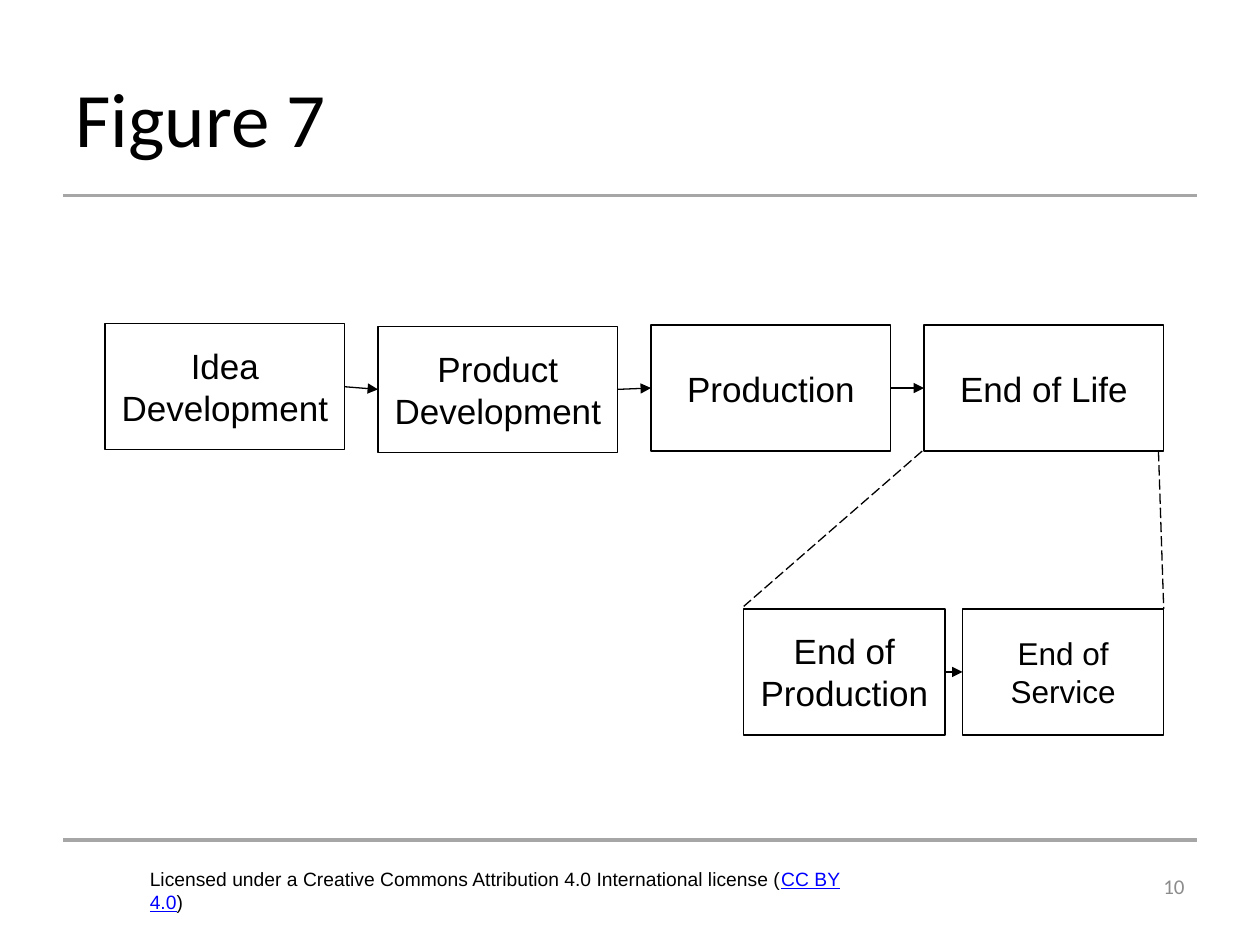
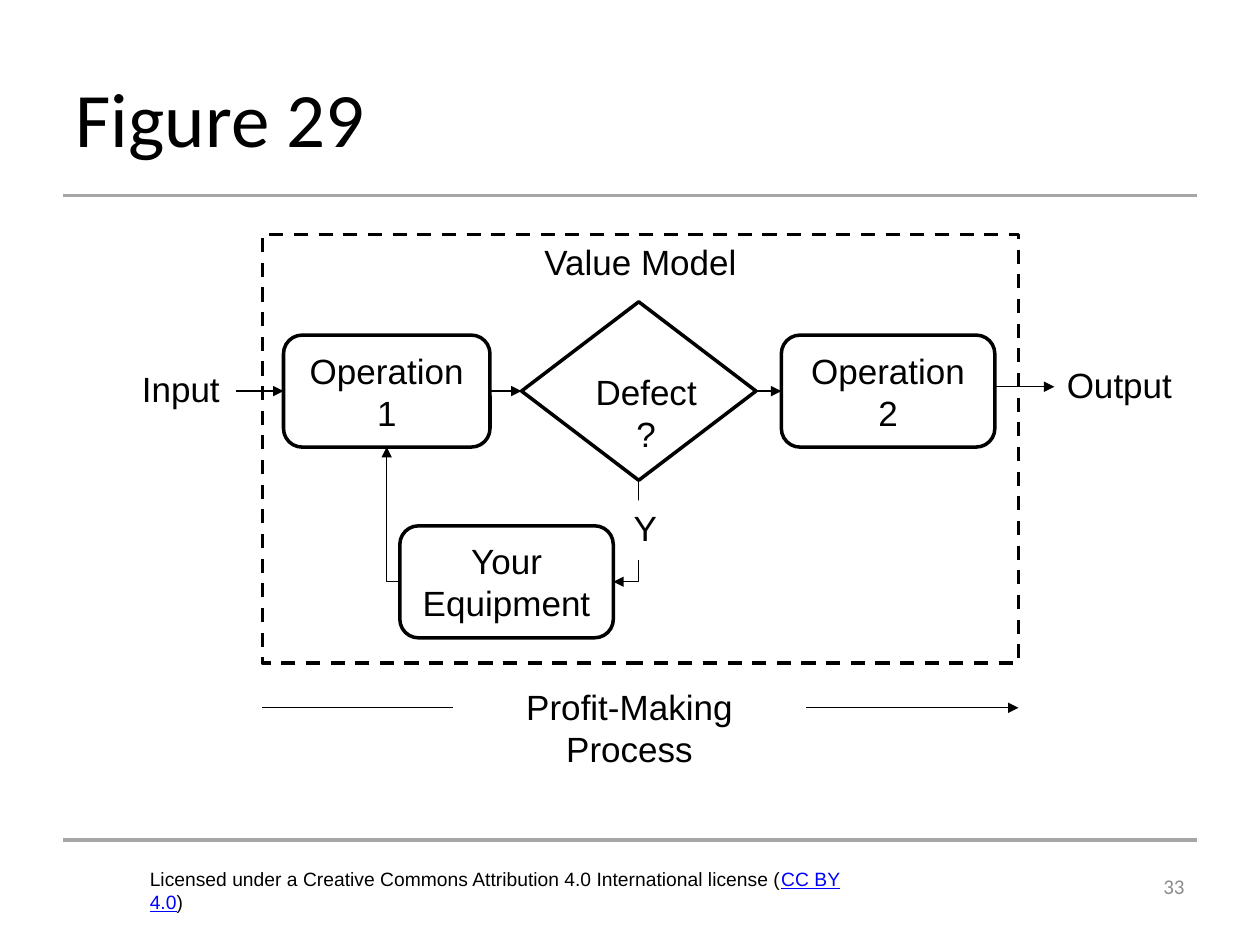
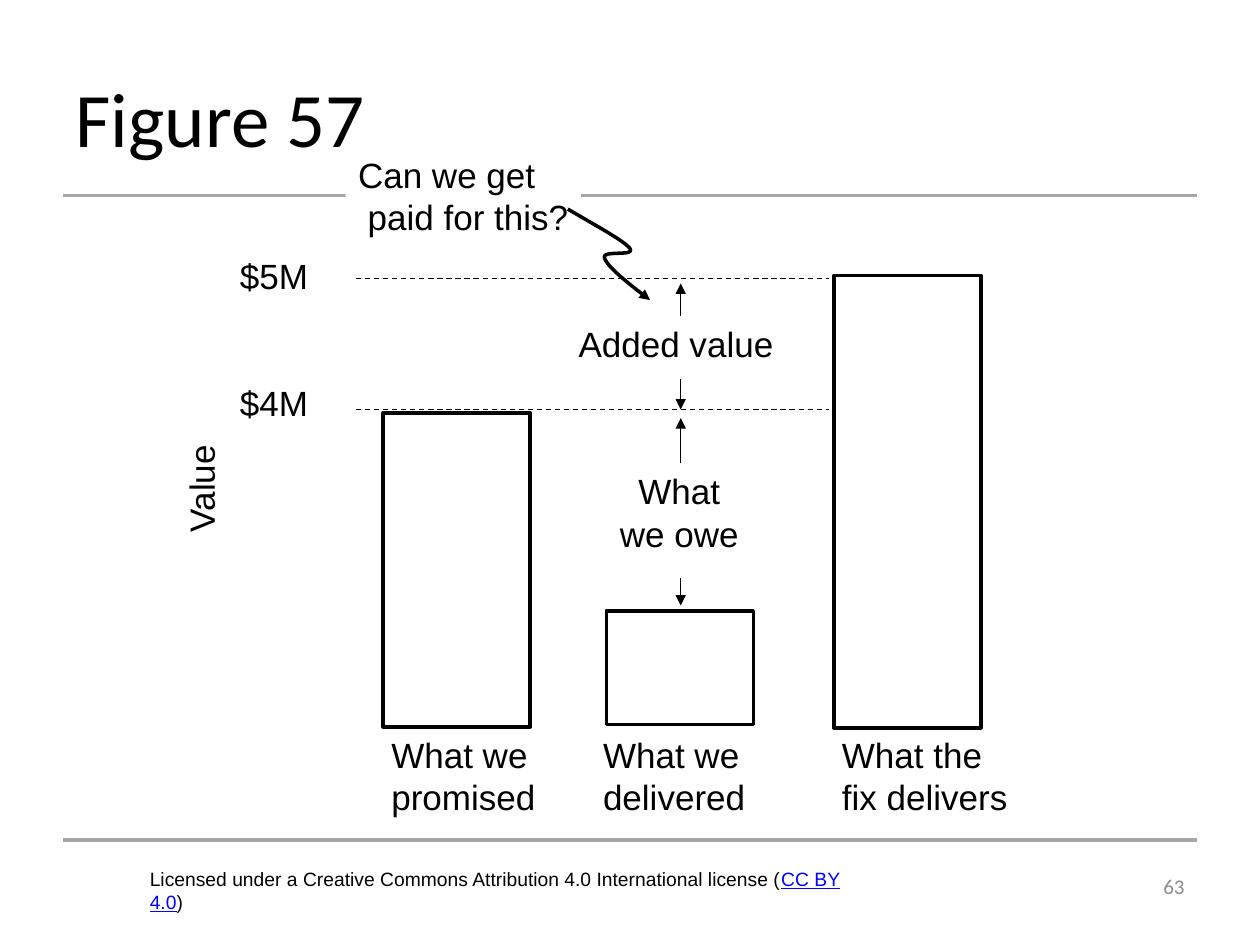
import lxml.etree
import pptx
import pptx.dml.color
import pptx.enum.dml
import pptx.enum.shapes
import pptx.enum.text
import pptx.oxml.ns
import pptx.util

Pt = pptx.util.Pt
SHAPE = pptx.enum.shapes.MSO_SHAPE
CONNECTOR = pptx.enum.shapes.MSO_CONNECTOR
DASH = pptx.enum.dml.MSO_LINE
ALIGN = pptx.enum.text.PP_ALIGN
ANCHOR = pptx.enum.text.MSO_ANCHOR

BLACK, WHITE, RULE_GRAY, NUMBER_GRAY, LINK_BLUE = "000000", "FFFFFF", "A6A6A6", "8C8C8C", "0000FF"
BODY_FONT, HEADING_FONT = "Arial", "Calibri"
THIN, THICK = 0.75, 2
TITLE_BOX = (36, 21.5, 648, 90)
FOOTER_BOX = (36, 480, 648, 41)


def color(value):
    """Turn a hex string into a colour."""
    return pptx.dml.color.RGBColor.from_string(value)


def write(shape, text, size=20, font=BODY_FONT, ink=BLACK, align=ALIGN.LEFT, anchor=ANCHOR.TOP):
    """Put text in a shape, one paragraph a line, and format it."""
    frame = shape.text_frame
    frame.text = text
    frame.word_wrap = True
    frame.vertical_anchor = anchor
    for para in frame.paragraphs:
        para.alignment = align
        para.font.size = Pt(size)
        para.font.name = font
        para.font.color.rgb = color(ink)


def style_line(line, ink, width, dash=None):
    """Set the colour, width and dash of a line."""
    line.color.rgb = color(ink)
    line.width = Pt(width)
    if dash:
        line.dash_style = dash


def add_arrowheads(shape, ends):
    """Add triangles at the named ends, headEnd before tailEnd."""
    outline = shape._element.spPr.find(pptx.oxml.ns.qn("a:ln"))
    for end in ends:
        lxml.etree.SubElement(outline, pptx.oxml.ns.qn(f"a:{end}"), type="triangle")


def add_label(page, left, top, width, height, text, **text_style):
    """Add a text box."""
    label = page.shapes.add_textbox(Pt(left), Pt(top), Pt(width), Pt(height))
    write(label, text, **text_style)
    return label


def add_patch(page, left, top, width, height, text, **text_style):
    """Add a text box on white that hides what lies behind it."""
    patch = add_label(page, left, top, width, height, text, **text_style)
    patch.fill.solid()
    patch.fill.fore_color.rgb = color(WHITE)
    return patch


def add_box(page, kind, left, top, width, height, text="", weight=THICK, fill=None, dash=None,
            anchor=ANCHOR.MIDDLE, size=20):
    """Add an outlined shape with centred text."""
    box = page.shapes.add_shape(kind, Pt(left), Pt(top), Pt(width), Pt(height))
    box.shadow.inherit = False
    if fill:
        box.fill.solid()
        box.fill.fore_color.rgb = color(fill)
    else:
        box.fill.background()
    style_line(box.line, BLACK, weight, dash)
    if text:
        write(box, text, size=size, align=ALIGN.CENTER, anchor=anchor)
    return box


def add_line(page, start, end, ink=BLACK, weight=THIN, dash=None, ends=(), kind=CONNECTOR.STRAIGHT):
    """Add a connector between two points."""
    line = page.shapes.add_connector(kind, *(Pt(value) for value in (*start, *end)))
    style_line(line.line, ink, weight, dash)
    add_arrowheads(line, ends)
    lxml.etree.SubElement(line._element.spPr, pptx.oxml.ns.qn("a:effectLst"))
    return line


def add_corner(page, start, end, ends):
    """Add a connector with one bend that leaves its start sideways."""
    corner = add_line(page, start, end, ends=ends, kind=CONNECTOR.ELBOW)
    corner._element.spPr.find(pptx.oxml.ns.qn("a:prstGeom")).set("prst", "bentConnector2")


def join(page, first, second):
    """Draw an arrow from the right side of one box to the left side of the next."""
    arrow = add_line(page, (0, 0), (1, 1), ends=["tailEnd"])
    arrow.begin_connect(first, 3)
    arrow.end_connect(second, 1)


def curve_points(start, segments, steps=12):
    """Return points along a chain of cubic curves."""
    points = [start]
    for first, second, end in segments:
        for step in range(1, steps + 1):
            t = step / steps
            weights = ((1 - t) ** 3, 3 * t * (1 - t) ** 2, 3 * t * t * (1 - t), t ** 3)
            corners = (start, first, second, end)
            points.append(tuple(sum(w * corner[axis] for w, corner in zip(weights, corners))
                                for axis in (0, 1)))
        start = end
    return points


def add_title(page, area, text):
    """Place the title with the rule under it."""
    left, top, width, height = area
    title = page.shapes.title
    title.left, title.top, title.width, title.height = (Pt(value) for value in area)
    write(title, text, size=44, font=HEADING_FONT, anchor=ANCHOR.MIDDLE)
    bottom = top + height
    add_line(page, (left, bottom), (left + width, bottom), RULE_GRAY, 1.75)


def add_footer(page, area, number):
    """Place the rule, licence and slide number at the foot."""
    left, top, width, height = area
    add_line(page, (left, top), (left + width, top), RULE_GRAY, 1.75)
    licence = add_label(page, left + 42.5, top + 12, 430.5, 21, "", size=11)
    para = licence.text_frame.paragraphs[0]
    for text in ("Licensed under a Creative Commons Attribution 4.0 International license (", "CC BY 4.0", ")"):
        para.add_run().text = text
    link = para.runs[1]
    link.font.color.rgb = color(LINK_BLUE)
    link.font.underline = True
    add_label(page, left + width - 132, top + 12, 132, 29, number, size=12, font=HEADING_FONT,
              ink=NUMBER_GRAY, align=ALIGN.RIGHT, anchor=ANCHOR.MIDDLE)


def draw_life_cycle(page, area):
    """Draw the life cycle stages and the two phases of the last one."""
    left, top, width, height = area
    right, stage_height, pitch = left + width, 72, 156
    stage_specs = (("Idea\nDevelopment", 0, WHITE), ("Product\nDevelopment", 1.5, WHITE),
                   ("Production", 0.75, None), ("End of Life", 0.75, None))
    stages = [add_box(page, SHAPE.RECTANGLE, left + pitch * index, top + drop, 137, stage_height,
                      text, THIN, fill)
              for index, (text, drop, fill) in enumerate(stage_specs)]
    phase_top = top + height - stage_height
    phases = [add_box(page, SHAPE.RECTANGLE, right - offset, phase_top, 115, stage_height,
                      text, THIN, WHITE, size=size)
              for text, offset, size in (("End of Production", 240, 20), ("End of Service", 115, 18))]
    for row in (stages, phases):
        for first, second in zip(row, row[1:]):
            join(page, first, second)
    stage_bottom = top + stage_height + 0.75
    add_line(page, (left + 3 * pitch - 1, stage_bottom), (right - 240, phase_top - 1.5), dash=DASH.LONG_DASH)
    add_line(page, (right - 3, stage_bottom), (right, phase_top), dash=DASH.LONG_DASH)


def draw_value_model(page, area):
    """Draw the value model frame, the flow in it and the process under it."""
    left, top, width, height = area
    add_box(page, SHAPE.RECTANGLE, *area, "Value Model", dash=DASH.DASH, anchor=ANCHOR.TOP)
    source = add_label(page, left - 76, top + 72.5, 61, 34, "Input")
    result = add_label(page, left + 452.5, top + 70, 78.5, 34, "Output")
    first, second, equipment = (
        add_box(page, SHAPE.ROUNDED_RECTANGLE, left + x, top + y, box_width, 64, text)
        for text, x, y, box_width in (("Operation 1", 12, 57.5, 118), ("Operation 2", 296.5, 57.5, 122),
                                      ("Your Equipment", 78.5, 166.5, 122)))
    decision = add_box(page, SHAPE.DIAMOND, left + 148, top + 38.5, 134, 102)
    add_label(page, left + 182.5, top + 74, 73.5, 60, "Defect?", align=ALIGN.CENTER)
    flow = (source, first, decision, second)
    for start, end in zip(flow, flow[1:]):
        join(page, start, end)
    output = add_line(page, (left + 418.5, top + 87), (left + 452.5, top + 87), ends=["tailEnd"])
    output.end_connect(result, 1)
    equipment_middle = top + 198.5
    add_corner(page, (left + 78.5, equipment_middle), (left + 71, top + 121.5), ["tailEnd"])
    add_corner(page, (left + 200.5, equipment_middle), (left + 215, top + 140.5), ["headEnd"])
    add_patch(page, left + 205, top + 152, 26.5, 34, "Y")
    process_y = top + height + 25.5
    add_line(page, (left, process_y), (left + width, process_y), ends=["tailEnd"])
    add_patch(page, left + 109, process_y - 16.5, 201.5, 34, "Profit-Making Process", align=ALIGN.CENTER)


def draw_value_bars(page, area):
    """Draw the promised, delivered and fixed value as bars with the gaps between them."""
    left, top, width, height = area
    middle = left + 259
    add_line(page, (middle, top + 155), (middle, top + 262), ends=["headEnd", "tailEnd"])
    axis = add_label(page, left - 51.5, top + 175, 73, 31.5, "Value")
    axis.rotation = 270
    for text, x, label_width in (("What we\npromised", 86.5, 101), ("What we\ndelivered", 207.5, 101),
                                 ("What the\nfix delivers", 344, 110)):
        add_label(page, left + x, top + height - 65, label_width, 65, text)
    add_patch(page, left + 67.5, top, 134.5, 65, "Can we get\n paid for this?")
    for x, y, bar_height in ((89, 152, 179.5), (216.5, 265, 65), (346.5, 73.5, 258.5)):
        add_box(page, SHAPE.RECTANGLE, left + x, top + y, 84, bar_height, fill=WHITE)
    for text, text_y, line_y in (("$5M", 58, 75), ("$4M", 130.5, 150)):
        add_label(page, left, top + text_y, 57, 36.5, text)
        add_line(page, (left + 73.5, top + line_y), (left + 343.5, top + line_y), dash=DASH.DASH)
    add_line(page, (middle, top + 78), (middle, top + 150), ends=["headEnd", "tailEnd"])
    owed = add_patch(page, left + 215.5, top + 181, 85.5, 65, "What\nwe owe", align=ALIGN.CENTER)
    style_line(owed.line, WHITE, THIN)
    add_patch(page, left + 193.5, top + 96.5, 126, 36, "Added value")
    draw_pointer(page, left + 194.5, top + 35.5)


def draw_pointer(page, left, top):
    """Draw the curved arrow from the question to the added value."""
    segments = (((16, 9.5), (32, 18), (35.5, 22.5)),
                ((39, 27.5), (19, 23), (21, 28)),
                ((22.5, 33), (34.5, 42.5), (47, 52)))
    points = [(Pt(left + x), Pt(top + y)) for x, y in curve_points((0, 0), segments)]
    builder = page.shapes.build_freeform(*points[0])
    builder.add_line_segments(points[1:], close=False)
    pointer = builder.convert_to_shape()
    pointer.shadow.inherit = False
    pointer.fill.background()
    style_line(pointer.line, BLACK, THICK)
    add_arrowheads(pointer, ["tailEnd"])


def main():
    """Build the three figure slides."""
    deck = pptx.Presentation()
    deck.slide_width, deck.slide_height = Pt(720), Pt(540)
    figures = (("Figure 7", "10", draw_life_cycle, (60, 185, 605, 235)),
               ("Figure 29", "33", draw_value_model, (150, 134, 432, 245)),
               ("Figure 57", "63", draw_value_bars, (130, 84, 454, 396.5)))
    for title, number, draw_figure, area in figures:
        page = deck.slides.add_slide(deck.slide_layouts[5])
        add_title(page, TITLE_BOX, title)
        add_footer(page, FOOTER_BOX, number)
        draw_figure(page, area)
    deck.save("out.pptx")


if __name__ == "__main__":
    main()
